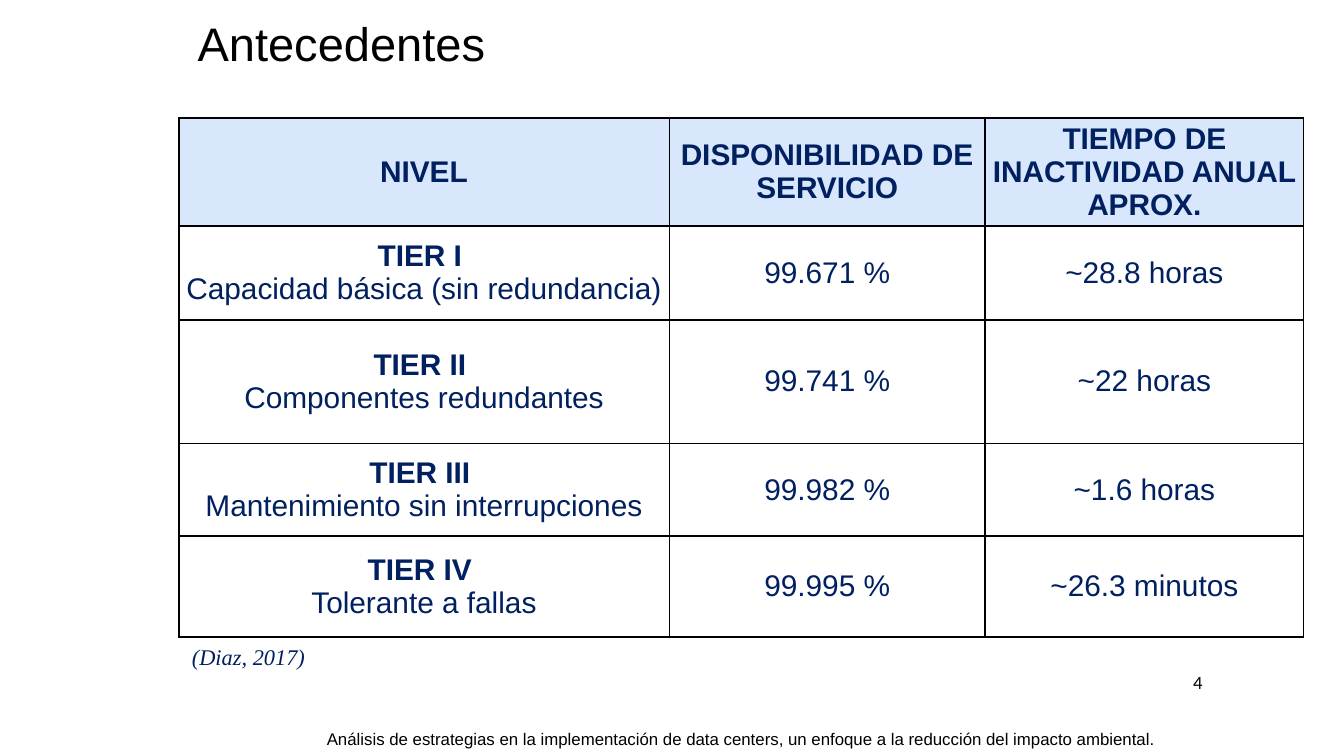
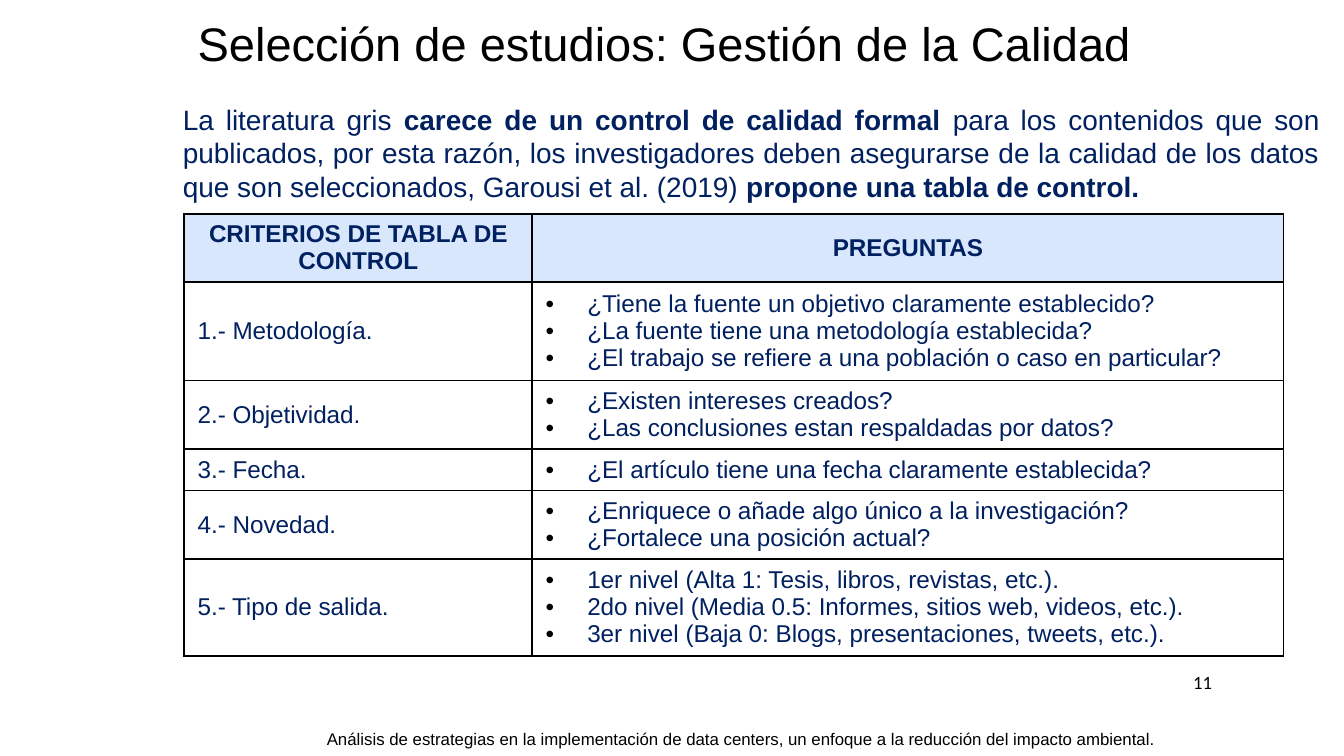
from lxml.etree import SubElement
from pptx import Presentation
from pptx.dml.color import RGBColor
from pptx.enum.text import MSO_ANCHOR, MSO_AUTO_SIZE, PP_ALIGN
from pptx.oxml.ns import qn
from pptx.util import Inches, Pt

COLORS = {"black": "000000", "navy": "002060", "header": "D9E7FD", "white": "FFFFFF"}
FOOTER = ("Análisis de estrategias en la implementación de data centers, "
          "un enfoque a la reducción del impacto ambiental.")
TITLE_ONLY, TITLE_AND_CONTENT = 5, 1
CELL_MARGINS = (0.1, 0.05, 0.1, 0.05)


def color(name):
    return RGBColor.from_string(COLORS[name])


def add_bullet(para, indent=0.31):
    """Give the paragraph a black round bullet with a hanging indent."""
    properties = para._p.get_or_add_pPr()
    properties.set("marL", str(Inches(indent)))
    properties.set("indent", str(-Inches(indent)))
    bullet_color = SubElement(properties, qn("a:buClr"))
    SubElement(bullet_color, qn("a:srgbClr"), val=COLORS["black"])
    SubElement(properties, qn("a:buFont"), typeface="Arial")
    SubElement(properties, qn("a:buChar"), char="•")


def remove_bullet(para):
    properties = para._p.get_or_add_pPr()
    properties.set("marL", "0")
    properties.set("indent", "0")
    SubElement(properties, qn("a:buNone"))


def write(para, text, size=16, font="Arial", fill="navy", bold=False, italic=False,
          align=PP_ALIGN.LEFT):
    """Add one formatted span to a paragraph."""
    para.alignment = align
    span = para.add_run()
    span.text = text
    span.font.size = Pt(size)
    span.font.name = font
    span.font.bold = bold
    span.font.italic = italic
    span.font.color.rgb = color(fill)


def set_borders(cell, width=1):
    properties = cell._tc.get_or_add_tcPr()
    for side in ("lnL", "lnR", "lnT", "lnB"):
        line = SubElement(properties, qn(f"a:{side}"), w=str(Pt(width)))
        solid = SubElement(line, qn("a:solidFill"))
        SubElement(solid, qn("a:srgbClr"), val=COLORS["black"])


class Deck:
    """Holds the shared style and the current slide."""

    def __init__(self):
        self.deck = Presentation()
        self.deck.slide_width = Inches(10)
        self.deck.slide_height = Inches(10) * 9 // 16
        self.page = None

    def add_page(self, layout, title, number, title_width, number_width):
        self.page = self.deck.slides.add_slide(self.deck.slide_layouts[layout])
        para = self.frame(self.page.shapes.title, 1.37, 0, title_width, 0.63,
                          margins=(0.1,) * 4, anchor=MSO_ANCHOR.BOTTOM)
        write(para, title, size=25.2, fill="black")
        self.text(FOOTER, 1.93, 5.37, 7.16, 0.25, size=9, fill="black",
                  align=PP_ALIGN.CENTER)
        self.text(number, 8.78, 4.94, number_width, 0.27, size=10, font="Calibri",
                  fill="black")

    def frame(self, box, left, top, width, height, margins=CELL_MARGINS,
              anchor=MSO_ANCHOR.TOP):
        """Place a box, set its frame and return its first paragraph."""
        box.left, box.top = Inches(left), Inches(top)
        box.width, box.height = Inches(width), Inches(height)
        frame = box.text_frame
        frame.word_wrap = True
        frame.auto_size = MSO_AUTO_SIZE.NONE
        frame.vertical_anchor = anchor
        (frame.margin_left, frame.margin_top,
         frame.margin_right, frame.margin_bottom) = map(Inches, margins)
        return frame.paragraphs[0]

    def text(self, text, left, top, width, height, **style):
        box = self.page.shapes.add_textbox(0, 0, 0, 0)
        write(self.frame(box, left, top, width, height), text, **style)

    def body(self, spans, left, top, width, height, size):
        para = self.frame(self.page.placeholders[1], left, top, width, height)
        para.space_before, para.space_after = Pt(0), Pt(12)
        remove_bullet(para)
        for text, bold in spans:
            write(para, text, size=size, bold=bold, align=PP_ALIGN.JUSTIFY)

    def table(self, left, top, widths, heights, headers, rows, fill_cell, size,
              margins=CELL_MARGINS):
        """Draw a bordered table; fill_cell writes each cell below the header."""
        shape = self.page.shapes.add_table(
            len(heights), len(widths), Inches(left), Inches(top),
            Inches(sum(widths)), Inches(sum(heights)))
        table = shape.table
        table.first_row = table.horz_banding = False
        for column, width in zip(table.columns, widths):
            column.width = Inches(width)
        for row, height in zip(table.rows, heights):
            row.height = Inches(height)
        for row_index, values in enumerate([headers, *rows]):
            for column_index, value in enumerate(values):
                cell = table.cell(row_index, column_index)
                cell.vertical_anchor = MSO_ANCHOR.MIDDLE
                (cell.margin_left, cell.margin_top,
                 cell.margin_right, cell.margin_bottom) = map(Inches, margins)
                set_borders(cell)
                cell.fill.solid()
                cell.fill.fore_color.rgb = color("white" if row_index else "header")
                if row_index:
                    fill_cell(cell.text_frame, value, size)
                else:
                    write(cell.text_frame.paragraphs[0], value, size=size, bold=True,
                          align=PP_ALIGN.CENTER)


def paragraphs(frame, lines):
    """Yield a paragraph of the frame with each line."""
    for index, line in enumerate(lines):
        yield (frame.add_paragraph() if index else frame.paragraphs[0]), line


def fill_tier_cell(frame, value, size):
    lines = value if isinstance(value, tuple) else (value,)
    for para, line in paragraphs(frame, lines):
        write(para, line, size=size, bold=line.startswith("TIER"), align=PP_ALIGN.CENTER)


def fill_criteria_cell(frame, value, size):
    if isinstance(value, str):
        write(frame.paragraphs[0], value, size=size, align=PP_ALIGN.JUSTIFY)
        return
    for para, question in paragraphs(frame, value):
        add_bullet(para)
        write(para, question, size=size)


def build_background(deck):
    deck.add_page(TITLE_ONLY, "Antecedentes", "4", title_width=8.29, number_width=0.31)

    # Availability by tier
    tiers = [
        (("TIER I ", "Capacidad básica (sin redundancia)"), "99.671 %", "~28.8 horas"),
        (("TIER II ", "Componentes redundantes"), "99.741 %", "~22 horas"),
        (("TIER III ", "Mantenimiento sin interrupciones"), "99.982 %", "~1.6 horas"),
        (("TIER IV ", "Tolerante a fallas"), "99.995 %", "~26.3 minutos"),
    ]
    deck.table(1.33, 0.88, [3.65, 2.35, 2.37], [0.8, 0.7, 0.92, 0.69, 0.75],
               ["NIVEL", "DISPONIBILIDAD DE SERVICIO",
                "TIEMPO DE INACTIVIDAD ANUAL APROX."],
               tiers, fill_tier_cell, size=16, margins=(0.04, 0, 0.04, 0))

    # Citation
    deck.text("(Diaz, 2017)", 1.33, 4.74, 2.67, 0.3, size=12, font="Times New Roman",
              italic=True)


def build_quality(deck):
    deck.add_page(TITLE_AND_CONTENT, "Selección de estudios: Gestión de la Calidad", "11",
                  title_width=8.44, number_width=0.5)

    # Introduction
    deck.body([
        ("La literatura gris ", False),
        ("carece de un control de calidad formal ", True),
        ("para los contenidos que son publicados, por esta razón, los investigadores "
         "deben asegurarse de la calidad de los datos que son seleccionados, "
         "Garousi et al. (2019) ", False),
        ("propone una tabla de control.", True),
    ], 1.26, 0.71, 8.66, 0.94, size=15)

    # Control table
    criteria = [
        ("1.- Metodología.", (
            "¿Tiene la fuente un objetivo claramente establecido?",
            "¿La fuente tiene una metodología establecida?",
            "¿El trabajo se refiere a una población o caso en particular?")),
        ("2.- Objetividad.", (
            "¿Existen intereses creados?",
            "¿Las conclusiones estan respaldadas por datos?")),
        ("3.- Fecha.", ("¿El artículo tiene una fecha claramente establecida?",)),
        ("4.- Novedad.", (
            "¿Enriquece o añade algo único a la investigación?",
            "¿Fortalece una posición actual?")),
        ("5.- Tipo de salida.", (
            "1er nivel (Alta 1: Tesis, libros, revistas, etc.).",
            "2do nivel (Media 0.5: Informes, sitios web, videos, etc.).",
            "3er nivel (Baja 0: Blogs, presentaciones, tweets, etc.).")),
    ]
    deck.table(1.37, 1.59, [2.59, 5.59], [0.51, 0.73, 0.51, 0.31, 0.51, 0.72],
               ["CRITERIOS DE TABLA DE CONTROL", "PREGUNTAS"],
               criteria, fill_criteria_cell, size=13)


def main():
    deck = Deck()
    build_background(deck)
    build_quality(deck)
    deck.deck.save("out.pptx")


if __name__ == "__main__":
    main()
